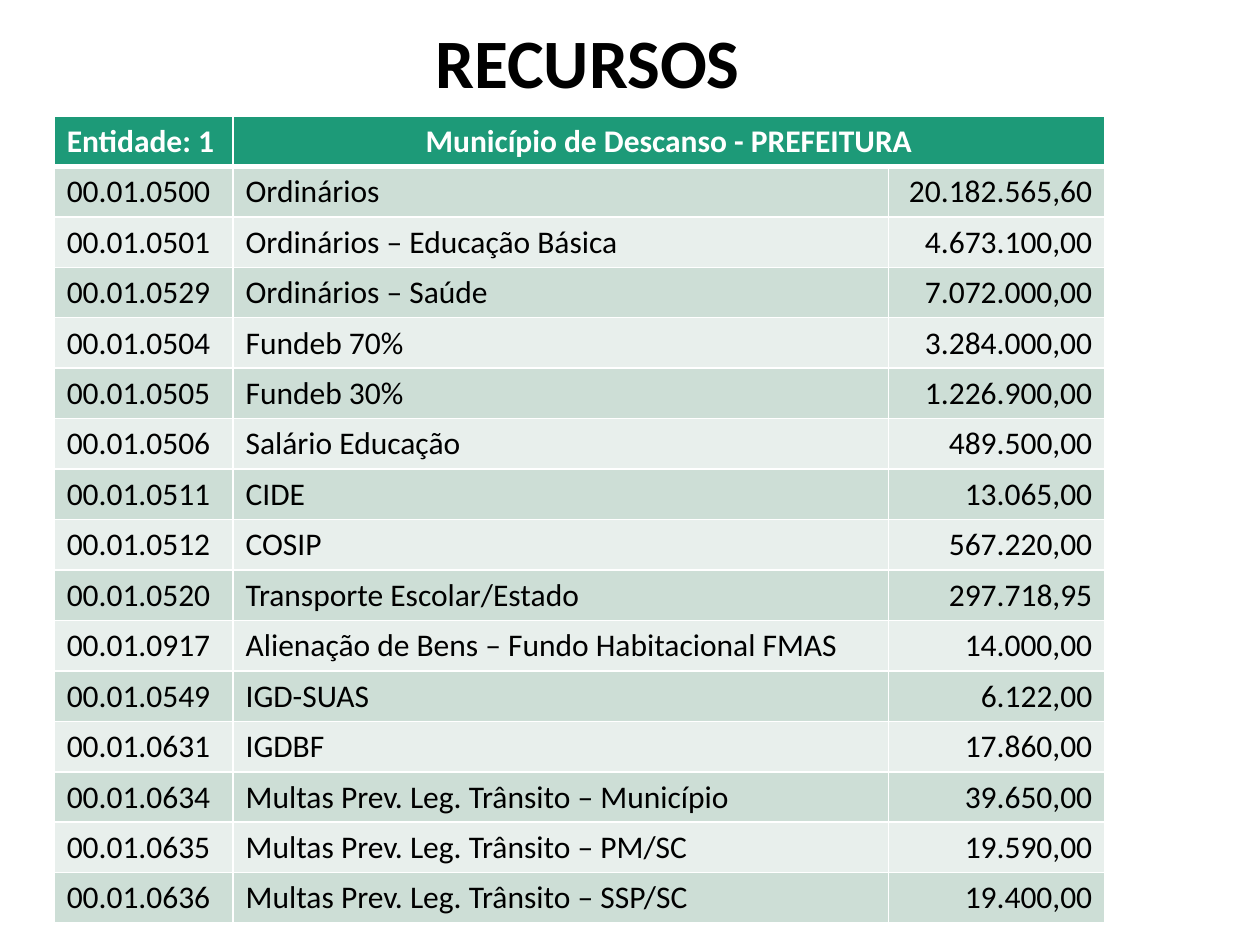
from lxml import etree
from pptx import Presentation
from pptx.dml.color import RGBColor
from pptx.enum.text import MSO_ANCHOR, PP_ALIGN
from pptx.oxml.ns import qn
from pptx.util import Inches, Pt

LEFT, CENTER, RIGHT = PP_ALIGN.LEFT, PP_ALIGN.CENTER, PP_ALIGN.RIGHT
MIDDLE = MSO_ANCHOR.MIDDLE

BLACK = RGBColor(0x00, 0x00, 0x00)
WHITE = RGBColor(0xFF, 0xFF, 0xFF)
GREEN = RGBColor(0x1D, 0x9A, 0x78)
BANDS = (RGBColor(0xCD, 0xDE, 0xD6), RGBColor(0xE8, 0xEF, 0xEC))

FONT = "Calibri"
COLUMN_WIDTHS = (1.42, 5.2, 1.72)
ROW_HEIGHT = 0.4
HEADER = ("Entidade: 1", "Município de Descanso - PREFEITURA")
RESOURCES = (
    ("00.01.0500", "Ordinários", "20.182.565,60"),
    ("00.01.0501", "Ordinários – Educação Básica", "4.673.100,00"),
    ("00.01.0529", "Ordinários – Saúde", "7.072.000,00"),
    ("00.01.0504", "Fundeb 70%", "3.284.000,00"),
    ("00.01.0505", "Fundeb 30%", "1.226.900,00"),
    ("00.01.0506", "Salário Educação", "489.500,00"),
    ("00.01.0511", "CIDE", "13.065,00"),
    ("00.01.0512", "COSIP", "567.220,00"),
    ("00.01.0520", "Transporte Escolar/Estado", "297.718,95"),
    ("00.01.0917", "Alienação de Bens – Fundo Habitacional FMAS", "14.000,00"),
    ("00.01.0549", "IGD-SUAS", "6.122,00"),
    ("00.01.0631", "IGDBF", "17.860,00"),
    ("00.01.0634", "Multas Prev. Leg. Trânsito – Município", "39.650,00"),
    ("00.01.0635", "Multas Prev. Leg. Trânsito – PM/SC", "19.590,00"),
    ("00.01.0636", "Multas Prev. Leg. Trânsito – SSP/SC", "19.400,00"),
)


def write(frame, text, size, color, bold=False, align=LEFT):
    """Write one styled run in the first paragraph of a text frame."""
    para = frame.paragraphs[0]
    para.alignment = align
    span = para.add_run()
    span.text = text
    span.font.name = FONT
    span.font.size = Pt(size)
    span.font.bold = bold
    span.font.color.rgb = color
    return para


def set_borders(cell, top, bottom):
    """Give a cell white borders, with top and bottom widths in points."""
    properties = cell._tc.get_or_add_tcPr()
    for side, width in (("L", 1), ("R", 1), ("T", top), ("B", bottom)):
        line = etree.SubElement(properties, qn(f"a:ln{side}"), w=str(Pt(width)))
        fill = etree.SubElement(line, qn("a:solidFill"))
        etree.SubElement(fill, qn("a:srgbClr"), val=str(WHITE))


def fill_cell(cell, text, fill, color, bold=False, align=LEFT, top=1, bottom=1):
    """Set the borders, fill and text of one table cell."""
    set_borders(cell, top, bottom)
    cell.fill.solid()
    cell.fill.fore_color.rgb = fill
    if text:
        write(cell.text_frame, text, 18, color, bold, align)


def add_title(page, left, top, width, height):
    """Place the centred slide title in the given box."""
    box = page.shapes.add_textbox(left, top, width, height)
    frame = box.text_frame
    frame.word_wrap = True
    frame.vertical_anchor = MIDDLE
    para = write(frame, "RECURSOS", 39.6, BLACK, True, CENTER)
    para.line_spacing = 0.9


def add_resource_table(page, left, top, width, height):
    """Place the table of resources in the given box."""
    rows = len(RESOURCES) + 1
    table = page.shapes.add_table(rows, len(COLUMN_WIDTHS), left, top, width, height).table
    for column, column_width in zip(table.columns, COLUMN_WIDTHS):
        column.width = Inches(column_width)
    for row in table.rows:
        row.height = Inches(ROW_HEIGHT)

    table.cell(0, 1).merge(table.cell(0, 2))
    for index, (text, align) in enumerate(zip((*HEADER, ""), (LEFT, CENTER, LEFT))):
        fill_cell(table.cell(0, index), text, GREEN, WHITE, True, align, bottom=3)

    for number, resource in enumerate(RESOURCES, start=1):
        band = BANDS[(number - 1) % 2]
        top_width = 3 if number == 1 else 1
        for index, (text, align) in enumerate(zip(resource, (LEFT, LEFT, RIGHT))):
            fill_cell(table.cell(number, index), text, band, BLACK, align=align, top=top_width)


def main():
    """Build and save the slide."""
    deck = Presentation()
    deck.slide_width, deck.slide_height = Inches(10), Inches(7.5)
    page = deck.slides.add_slide(deck.slide_layouts[6])
    add_title(page, Inches(0.5), Inches(0.21), Inches(8.33), Inches(0.63))
    add_resource_table(page, Inches(0.43), Inches(0.92), Inches(sum(COLUMN_WIDTHS)),
                       Inches(ROW_HEIGHT * (len(RESOURCES) + 1)))
    deck.save("out.pptx")


if __name__ == "__main__":
    main()
